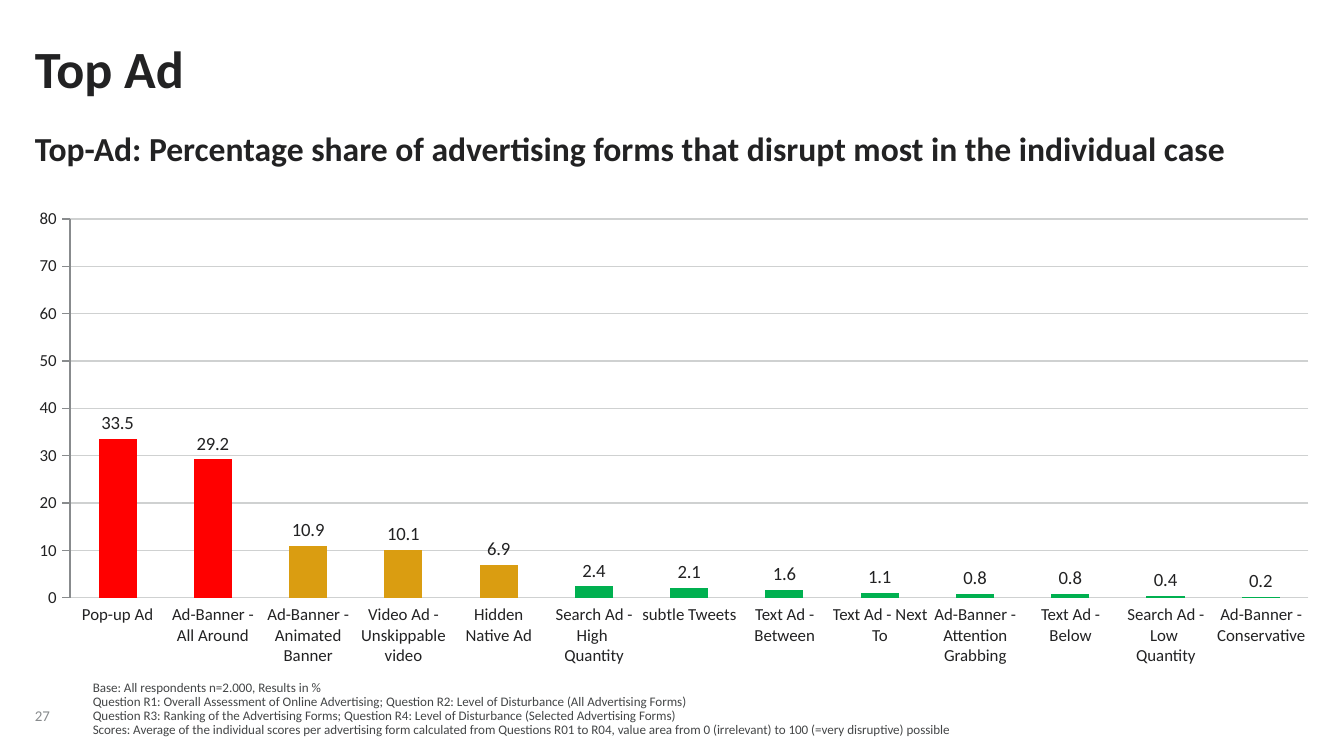
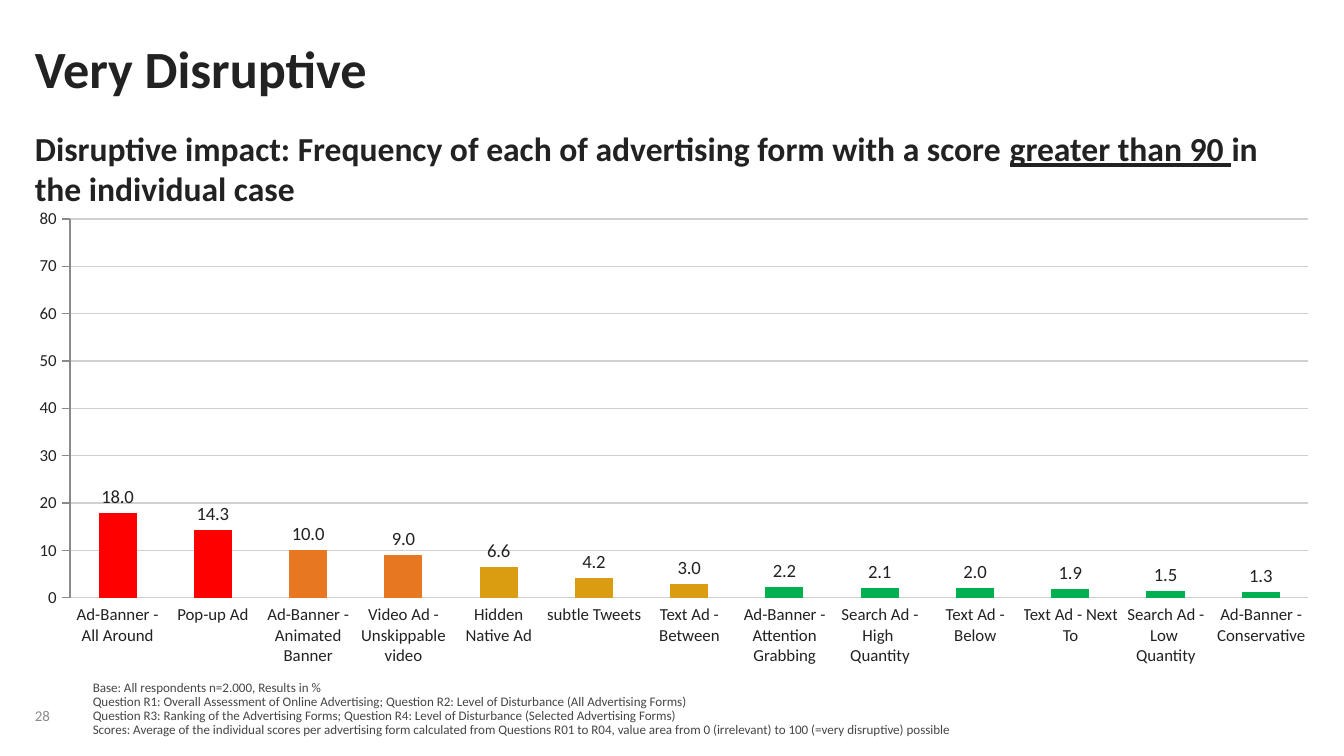
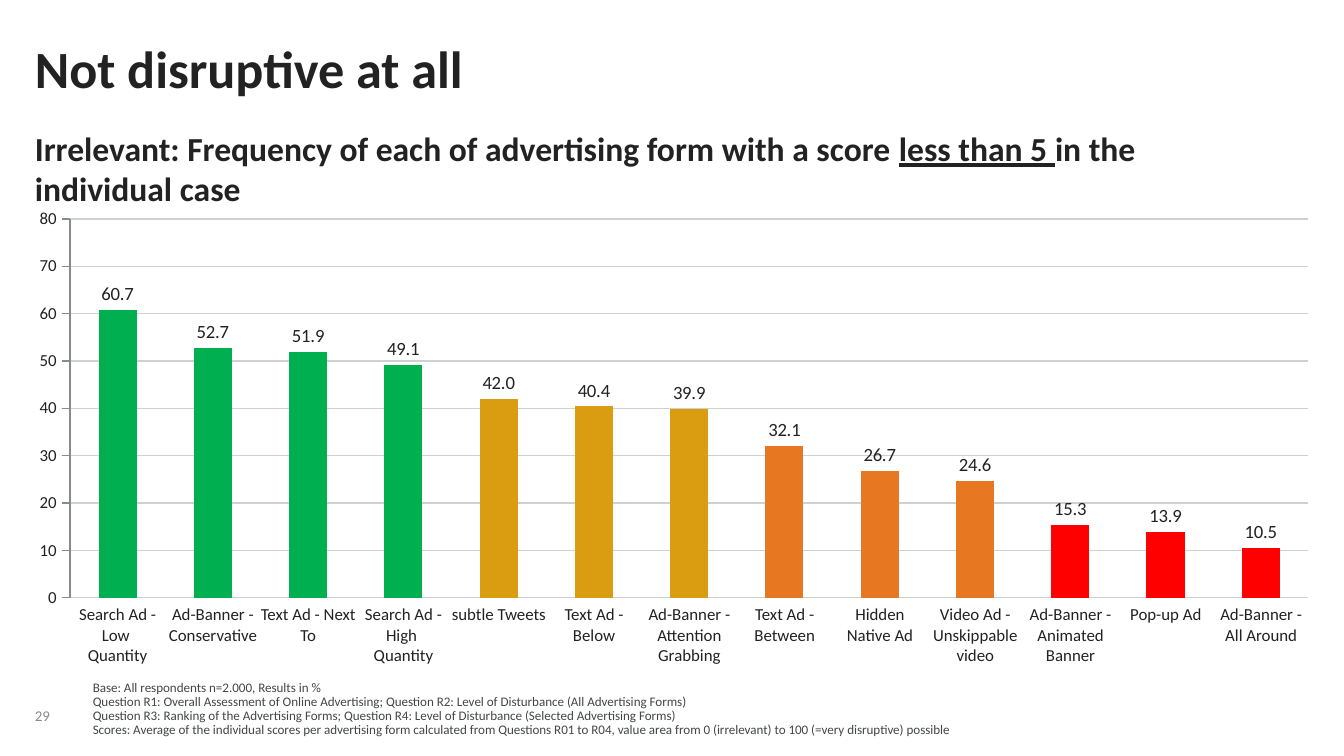
from lxml import etree
from pptx import Presentation
from pptx.chart.data import CategoryChartData
from pptx.dml.color import RGBColor
from pptx.enum.chart import XL_CHART_TYPE, XL_LABEL_POSITION, XL_TICK_MARK
from pptx.enum.text import MSO_ANCHOR, MSO_AUTO_SIZE, PP_ALIGN
from pptx.oxml import parse_xml
from pptx.oxml.ns import nsdecls, qn
from pptx.util import Inches, Pt

FONT = "Calibri"
COLORS = {
    "text": "222223",
    "note": "444647",
    "number": "888B8D",
    "grid": "CFD1D1",
    "red": "FF0000",
    "orange": "E87722",
    "gold": "DA9D11",
    "green": "00B050",
}
PLOT = {"x": 0.027, "y": 0.081, "w": 0.954, "h": 0.762}

FORMS = {
    "popup": "Pop-up Ad",
    "around": "Ad-Banner - All Around",
    "animated": "Ad-Banner - Animated Banner",
    "video": "Video Ad - Unskippable video",
    "native": "Hidden Native Ad",
    "search high": "Search Ad - High \nQuantity",
    "search low": "Search Ad - Low \nQuantity",
    "tweets": "subtle Tweets",
    "between": "Text Ad - Between",
    "next": "Text Ad - Next To",
    "below": "Text Ad - Below",
    "attention": "Ad-Banner - Attention Grabbing",
    "conservative": "Ad-Banner - Conservative",
}
NOTES = [
    "Base: All respondents n=2.000, Results in %",
    "Question R1: Overall Assessment of Online Advertising; "
    "Question R2: Level of Disturbance (All Advertising Forms)",
    "Question R3: Ranking of the Advertising Forms; "
    "Question R4: Level of Disturbance (Selected Advertising Forms)",
    "Scores: Average of the individual scores per advertising form calculated from "
    "Questions R01 to R04, value area from 0 (irrelevant) to 100 (=very disruptive) possible",
]
SLIDES = [
    {
        "title": "Top Ad",
        "subtitle": [
            ("Top-Ad: Percentage share of advertising forms that disrupt most "
             "in the individual case", False),
        ],
        "scores": {
            "popup": 33.5, "around": 29.2, "animated": 10.9, "video": 10.1,
            "native": 6.9, "search high": 2.4, "tweets": 2.1, "between": 1.6,
            "next": 1.1, "attention": 0.8, "below": 0.8, "search low": 0.4,
            "conservative": 0.2,
        },
        "bands": [("red", 2), ("gold", 3), ("green", 8)],
        "split_labels": False,
    },
    {
        "title": "Very Disruptive",
        "subtitle": [
            ("Disruptive impact: Frequency of each of advertising form with a score ", False),
            ("greater than 90 ", True),
            ("in the individual case", False),
        ],
        "scores": {
            "around": 18, "popup": 14.3, "animated": 10, "video": 9,
            "native": 6.6, "tweets": 4.2, "between": 3, "attention": 2.2,
            "search high": 2.1, "below": 2, "next": 1.9, "search low": 1.5,
            "conservative": 1.3,
        },
        "bands": [("red", 2), ("orange", 2), ("gold", 3), ("green", 6)],
        "split_labels": True,
    },
    {
        "title": "Not disruptive at all",
        "subtitle": [
            ("Irrelevant: Frequency of each of advertising form with a score ", False),
            ("less than 5 ", True),
            ("in the individual case", False),
        ],
        "scores": {
            "search low": 60.7, "conservative": 52.7, "next": 51.9,
            "search high": 49.1, "tweets": 42, "below": 40.4, "attention": 39.9,
            "between": 32.1, "native": 26.7, "video": 24.6, "animated": 15.3,
            "popup": 13.9, "around": 10.5,
        },
        "bands": [("green", 4), ("gold", 3), ("orange", 3), ("red", 3)],
        "split_labels": False,
    },
]


def rgb(name):
    return RGBColor.from_string(COLORS[name])


class Deck:
    """Hold the shared style and the current slide, and draw each kind of element."""

    def __init__(self):
        self.prs = Presentation()
        self.prs.slide_width = Inches(10)
        self.prs.slide_height = Inches(10 * 9 / 16)
        self.s = None

    def add_slide(self):
        self.s = self.prs.slides.add_slide(self.prs.slide_layouts[1])

    def font(self, font, size, color="text", bold=False):
        font.name = FONT
        font.size = Pt(size)
        font.bold = bold
        font.color.rgb = rgb(color)

    def run(self, p, text, size, color="text", bold=False):
        r = p.add_run()
        r.text = text
        self.font(r.font, size, color, bold)
        return r

    def frame(self, sp, box, anchor=MSO_ANCHOR.TOP, wrap=True, fit=MSO_AUTO_SIZE.NONE):
        sp.left, sp.top, sp.width, sp.height = [Inches(v) for v in box]
        tf = sp.text_frame
        tf.margin_left = tf.margin_top = tf.margin_right = tf.margin_bottom = 0
        tf.vertical_anchor = anchor
        tf.word_wrap = wrap
        tf.auto_size = fit
        return tf

    def text_box(self, box, **options):
        sp = self.s.shapes.add_textbox(0, 0, 0, 0)
        return self.frame(sp, box, **options)

    def title(self, text):
        tf = self.frame(self.s.shapes.title, (0.26, 0.27, 7.35, 0.92))
        p = tf.paragraphs[0]
        p.alignment = PP_ALIGN.LEFT
        self.run(p, text, 28, bold=True)

    def subtitle(self, parts):
        p = self.text_box((0.26, 0.95, 9.24, 0.25)).paragraphs[0]
        for text, underlined in parts:
            self.run(p, text, 18, bold=True).font.underline = underlined

    def notes(self, lines):
        tf = self.frame(self.s.placeholders[1], (0.69, 5.07, 6.7, 0.42),
                        MSO_ANCHOR.BOTTOM, fit=MSO_AUTO_SIZE.SHAPE_TO_FIT_TEXT)
        for i, line in enumerate(lines):
            p = tf.add_paragraph() if i else tf.paragraphs[0]
            pPr = p._p.get_or_add_pPr()
            pPr.set("marL", "0")
            pPr.set("indent", "0")
            etree.SubElement(pPr, qn("a:buNone"))
            p.space_before = Pt(0)
            p.line_spacing = 0.9
            self.run(p, line, 7, "note")

    def number(self, value):
        tf = self.text_box((0.26, 5.13, 0.34, 0.26), anchor=MSO_ANCHOR.BOTTOM, wrap=False)
        p = tf.paragraphs[0]
        p.line_spacing = 0.85
        self.run(p, str(value), 8, "number")

    def chart(self, values, bands):
        data = CategoryChartData(number_format="0.0")
        data.categories = [str(i + 1) for i in range(len(values))]
        data.add_series("Series 1", values)
        chart = self.s.shapes.add_chart(
            XL_CHART_TYPE.COLUMN_CLUSTERED, Inches(0.26), Inches(1.33),
            Inches(9.66), Inches(3.7), data).chart
        chart.has_title = False
        chart.has_legend = False
        self.font(chart.font, 10)
        self.plot_layout(chart)
        chart.category_axis.visible = False
        self.value_axis(chart.value_axis)

        plot = chart.plots[0]
        plot.gap_width = 150
        plot.vary_by_categories = False
        plot.has_data_labels = True
        labels = plot.data_labels
        labels.show_value = True
        labels.number_format = "0.0"
        labels.number_format_is_linked = False
        labels.position = XL_LABEL_POSITION.OUTSIDE_END
        self.font(labels.font, 10)

        series = plot.series[0]
        series.invert_if_negative = False
        colors = [color for color, count in bands for _ in range(count)]
        for i, color in enumerate(colors):
            fill = series.points[i].format.fill
            fill.solid()
            fill.fore_color.rgb = rgb(color)

    def plot_layout(self, chart):
        area = chart._chartSpace.chart.plotArea
        for old in area.findall(qn("c:layout")):
            area.remove(old)
        modes = "".join(f'<c:{k}Mode val="edge"/>' for k in "xy")
        sizes = "".join(f'<c:{k} val="{v}"/>' for k, v in PLOT.items())
        area.insert(0, parse_xml(
            f'<c:layout {nsdecls("c")}><c:manualLayout><c:layoutTarget val="inner"/>'
            f"{modes}{sizes}</c:manualLayout></c:layout>"))

    def value_axis(self, axis):
        axis.minimum_scale = 0
        axis.maximum_scale = 80
        axis.major_unit = 10
        axis.major_tick_mark = XL_TICK_MARK.OUTSIDE
        axis.minor_tick_mark = XL_TICK_MARK.NONE
        axis.tick_labels.number_format = "0"
        axis.tick_labels.number_format_is_linked = False
        self.font(axis.tick_labels.font, 9)
        axis.has_major_gridlines = True
        for line, color in ((axis.format.line, "number"),
                            (axis.major_gridlines.format.line, "grid")):
            line.color.rgb = rgb(color)
            line.width = Pt(0.75)

    def label_table(self, labels, split):
        table = self.s.shapes.add_table(
            1, len(labels), Inches(0.52), Inches(4.5), Inches(9.22), Inches(0.41)).table
        table.first_row = False
        table.horz_banding = False
        for cell, label in zip(table.rows[0].cells, labels):
            cell.fill.background()
            cell.margin_left = cell.margin_top = cell.margin_right = cell.margin_bottom = 0
            tf = cell.text_frame
            p = tf.paragraphs[0]
            for i, line in enumerate(label.split("\n")):
                if i and split:
                    p = tf.add_paragraph()
                elif i:
                    p.add_line_break()
                p.alignment = PP_ALIGN.CENTER
                self.run(p, line, 9)


def main():
    deck = Deck()
    for number, content in enumerate(SLIDES, 27):
        scores = content["scores"]
        deck.add_slide()
        deck.number(number)
        deck.chart(list(scores.values()), content["bands"])
        deck.title(content["title"])
        deck.subtitle(content["subtitle"])
        deck.notes(NOTES)
        deck.label_table([FORMS[key] for key in scores], content["split_labels"])
    deck.prs.save("out.pptx")


if __name__ == "__main__":
    main()
